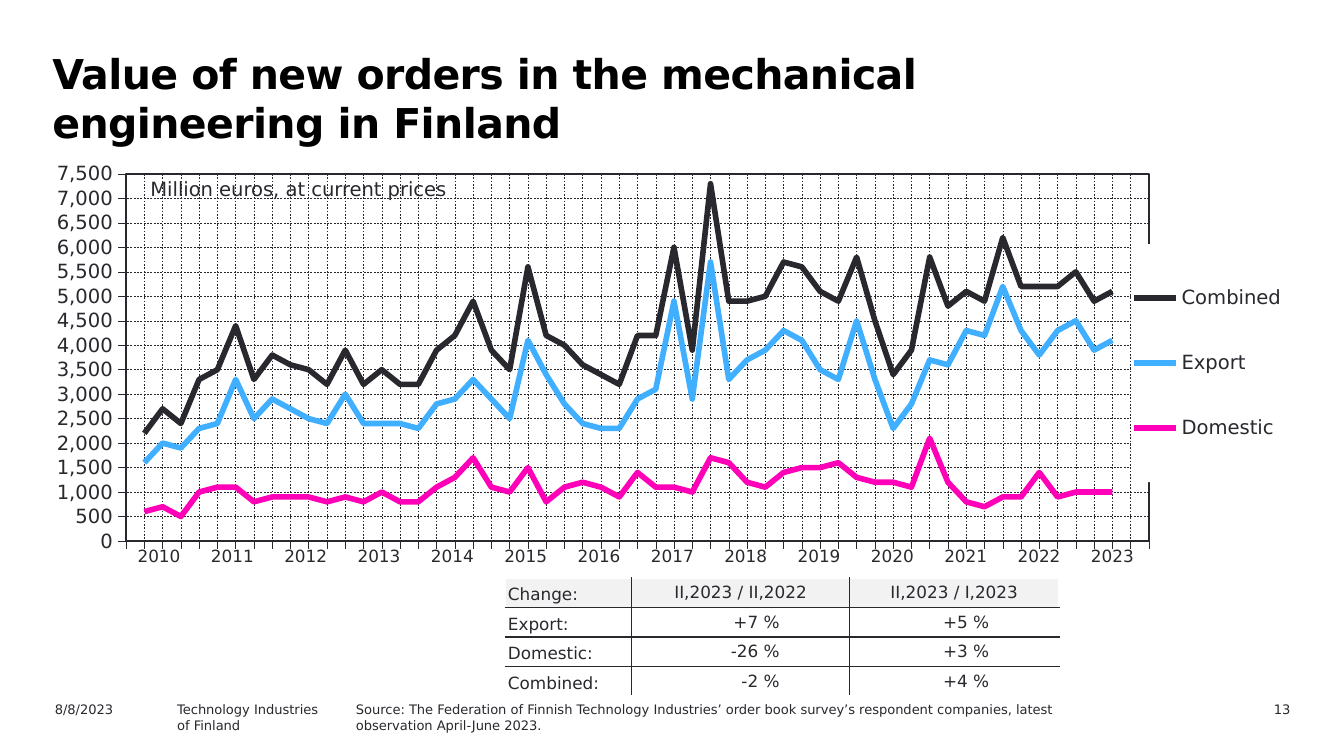
from dataclasses import dataclass

from lxml import etree
from pptx import Presentation
from pptx.chart.data import CategoryChartData
from pptx.dml.color import RGBColor
from pptx.enum import chart as ch, dml, text as tx
from pptx.oxml import parse_xml
from pptx.oxml.ns import nsdecls, qn
from pptx.util import Inches, Pt

FONT = "DejaVu Sans"
HEX = {"ink": "29282E", "sky": "40AFFF", "pink": "FF00B8",
       "black": "000000", "white": "FFFFFF", "pale": "F2F2F2"}
LEFT, MID, RIGHT = tx.PP_ALIGN.LEFT, tx.PP_ALIGN.CENTER, tx.PP_ALIGN.RIGHT
PLAIN = "{2D5ABB26-0587-4C30-8999-92F81FD0307C}"


@dataclass
class Line:
    name: str
    hue: str
    vals: list  # hundreds of million euros


@dataclass
class Note:
    text: str
    box: tuple
    align: int = LEFT


LINES = [
    Line("Combined", "ink", [
        22, 27, 24, 33, 35, 44, 33, 38, 36, 35, 32, 39, 32, 35, 32, 32, 39, 42,
        49, 39, 35, 56, 42, 40, 36, 34, 32, 42, 42, 60, 39, 73, 49, 49, 50, 57,
        56, 51, 49, 58, 45, 34, 39, 58, 48, 51, 49, 62, 52, 52, 52, 55, 49, 51]),
    Line("Export", "sky", [
        16, 20, 19, 23, 24, 33, 25, 29, 27, 25, 24, 30, 24, 24, 24, 23, 28, 29,
        33, 29, 25, 41, 34, 28, 24, 23, 23, 29, 31, 49, 29, 57, 33, 37, 39, 43,
        41, 35, 33, 45, 33, 23, 28, 37, 36, 43, 42, 52, 43, 38, 43, 45, 39, 41]),
    Line("Domestic", "pink", [
        6, 7, 5, 10, 11, 11, 8, 9, 9, 9, 8, 9, 8, 10, 8, 8, 11, 13,
        17, 11, 10, 15, 8, 11, 12, 11, 9, 14, 11, 11, 10, 17, 16, 12, 11, 14,
        15, 15, 16, 13, 12, 12, 11, 21, 12, 8, 7, 9, 9, 14, 9, 10, 10, 10]),
]
NOTES = [
    Note("13", (8.76, 5.17, 0.94, 0.18), RIGHT),
    Note("Source: The Federation of Finnish Technology Industries’ order book "
         "survey’s respondent companies, latest observation April-June 2023.",
         (2.55, 5.17, 5.44, 0.18)),
    Note("Technology Industries\nof Finland", (1.22, 5.17, 1.8, 0.18)),
    Note("8/8/2023", (0.31, 5.17, 1, 0.18)),
]
CHANGE = [
    ("Change:", "II,2023 / II,2022", "II,2023 / I,2023"),
    ("Export:", "+7 %", "+5 %"),
    ("Domestic:", "-26 %", "+3 %"),
    ("Combined:", "-2 %", "+4 %"),
]


def rgb(name: str) -> RGBColor:
    return RGBColor.from_string(HEX[name])


def style(font, size: float, hue: str = "ink", bold: bool = False) -> None:
    font.name, font.size, font.bold = FONT, Pt(size), bold
    font.color.rgb = rgb(hue)


def write(frame, words: str, *, size: float = 7, hue: str = "ink",
          bold: bool = False, align=LEFT, track: int = 0) -> None:
    """Fill a text frame, one paragraph a line; track is in 1/100 pt."""
    frame.text = words
    for para in frame.paragraphs:
        para.alignment = align
        for run in para.runs:
            style(run.font, size, hue, bold)
            if track:
                run.font._element.set("spc", str(track))


def label(slide, words: str, box: tuple, wrap: bool = True,
          inset: tuple = (0.1, 0.05, 0.1, 0.05), **form) -> None:
    frame = slide.shapes.add_textbox(*map(Inches, box)).text_frame
    frame.word_wrap = wrap
    pad(frame, inset)
    write(frame, words, **form)


def pad(item, inset: tuple) -> None:
    """Set left, top, right and bottom margins of a frame or cell."""
    (item.margin_left, item.margin_top,
     item.margin_right, item.margin_bottom) = map(Inches, inset)


def place(node, box: tuple, inner: bool = False) -> None:
    """Give a plot area or legend a fixed layout, in parts of the chart."""
    for old in node.findall(qn("c:layout")):
        node.remove(old)
    target = '<c:layoutTarget val="inner"/>' if inner else ""
    modes = "".join(f'<c:{k}Mode val="edge"/>' for k in "xy")
    sizes = "".join(f'<c:{k} val="{v}"/>' for k, v in zip("xywh", box))
    layout = parse_xml(f'<c:layout {nsdecls("c")}><c:manualLayout>{target}'
                       f'{modes}{sizes}</c:manualLayout></c:layout>')
    if inner:
        node.insert(0, layout)
    else:
        node.find(qn("c:legendPos")).addnext(layout)


def rule(axis) -> None:
    """Draw the axis line, outer ticks and dashed grid."""
    axis.major_tick_mark = ch.XL_TICK_MARK.OUTSIDE
    axis.minor_tick_mark = ch.XL_TICK_MARK.NONE
    axis.has_major_gridlines = True
    grid = axis.major_gridlines.format.line
    for line, width in ((axis.format.line, 0.22), (grid, 0.25)):
        line.color.rgb, line.width = rgb("ink"), Pt(width)
    grid.dash_style = dml.MSO_LINE.DASH


def graph(slide) -> None:
    data = CategoryChartData(number_format="#,##0")
    data.categories = [str(n + 1) for n in range(54)]
    for line in LINES:
        data.add_series(line.name,
                        [None, *(v * 100 for v in line.vals), None, None])
    chart = slide.shapes.add_chart(
        ch.XL_CHART_TYPE.LINE, *map(Inches, (0.16, 1.16, 9.49, 3.28)), data).chart
    chart.has_title = False
    style(chart.font, 10.5)
    plot = chart.plots[0]
    plot.vary_by_categories = False
    for line, series in zip(LINES, plot.series):
        series.smooth = False
        series.marker.style = ch.XL_MARKER_STYLE.NONE
        series.format.line.color.rgb = rgb(line.hue)
        series.format.line.width = Pt(3)

    cat, val = chart.category_axis, chart.value_axis
    rule(cat)
    rule(val)
    cat.tick_label_position = ch.XL_TICK_LABEL_POSITION.NONE
    val.minimum_scale, val.maximum_scale, val.major_unit = 0, 7500, 500
    val.tick_labels.number_format = "#,##0"
    val.tick_labels.number_format_is_linked = False
    style(val.tick_labels.font, 10.5)
    node = val._element
    for old in node.findall(qn("c:crossBetween")):
        node.remove(old)
    node.find(qn("c:crosses")).addnext(
        parse_xml(f'<c:crossBetween {nsdecls("c")} val="midCat"/>'))

    area = chart._chartSpace.chart.plotArea
    place(area, (0.082, 0.041, 0.802, 0.833), inner=True)
    area.append(parse_xml(
        f'<c:spPr {nsdecls("c", "a")}><a:noFill/><a:ln w="9525"><a:solidFill>'
        f'<a:srgbClr val="{HEX["ink"]}"/></a:solidFill></a:ln></c:spPr>'))
    chart.has_legend = True
    key = chart.legend
    key.position = ch.XL_LEGEND_POSITION.RIGHT
    key.include_in_layout = False
    style(key.font, 10.5)
    place(key._element, (0.87, 0.2, 0.12, 0.54))
    key._element.find(qn("c:txPr")).addprevious(parse_xml(
        f'<c:spPr {nsdecls("c", "a")}><a:solidFill><a:srgbClr '
        f'val="{HEX["white"]}"/></a:solidFill><a:ln><a:noFill/></a:ln></c:spPr>'))


def table(slide, box: tuple, cols: list, count: int = 1):
    """Add a table with no style and no banding."""
    grid = slide.shapes.add_table(count, len(cols), *map(Inches, box)).table
    grid.first_row = grid.horz_banding = False
    grid._tbl.tblPr.find(qn("a:tableStyleId")).text = PLAIN
    for col, width in zip(grid.columns, cols):
        col.width = Inches(width)
    return grid


def edge(cell, **hues: str) -> None:
    """Draw 1 pt borders, named by side in the order L, R, T, B."""
    props = cell._tc.get_or_add_tcPr()
    for side, hue in hues.items():
        line = etree.SubElement(props, qn(f"a:ln{side}"), w="12700")
        fill = etree.SubElement(line, qn("a:solidFill"))
        etree.SubElement(fill, qn("a:srgbClr"), val=HEX[hue])


def changes(slide) -> None:
    grid = table(slide, (3.76, 4.3, 4.12, 0.88), [0.94, 1.62, 1.56], len(CHANGE))
    for r, row in enumerate(CHANGE):
        for c, words in enumerate(row):
            cell = grid.cell(r, c)
            num = r > 0 and c > 0
            pad(cell, (0.02, 0.02, 0.52 if num else 0.02, 0.02))
            cell.vertical_anchor = tx.MSO_ANCHOR.MIDDLE if c else tx.MSO_ANCHOR.BOTTOM
            write(cell.text_frame, words, size=9,
                  align=RIGHT if num else MID if c else LEFT)
            outer = {"L": c == 0, "R": c == 2, "T": r == 0, "B": r == 3}
            edge(cell, **{s: "white" if o else "ink" for s, o in outer.items()})
            if r in (0, 3):
                cell.fill.solid()
                cell.fill.fore_color.rgb = rgb("white" if r else "pale")
            else:
                cell.fill.background()


def years(slide) -> None:
    span = range(2010, 2024)
    grid = table(slide, (0.91, 4.02, 7.64, 0.31), [7.64 / len(span)] * len(span))
    for cell, year in zip(grid.rows[0].cells, span):
        pad(cell, (0.1, 0.05, 0.1, 0.05))
        write(cell.text_frame, str(year), size=9, align=MID)
        cell.fill.background()


def main() -> None:
    deck = Presentation()
    deck.slide_width = Inches(10)
    deck.slide_height = deck.slide_width * 9 // 16
    slide = deck.slides.add_slide(deck.slide_layouts[6])
    label(slide, "Value of new orders in the mechanical engineering in Finland",
          (0.28, 0.31, 8.74, 0.71), inset=(0.11, 0.05, 0.3, 0),
          size=22, hue="black", bold=True, track=-30)
    graph(slide)
    label(slide, "Million euros, at current prices", (1.03, 1.27, 2.44, 0.27),
          wrap=False, inset=(0.09, 0.05, 0.09, 0.05), size=10.5)
    changes(slide)
    for note in NOTES:
        label(slide, note.text, note.box, align=note.align)
    years(slide)
    deck.save("out.pptx")


if __name__ == "__main__":
    main()
